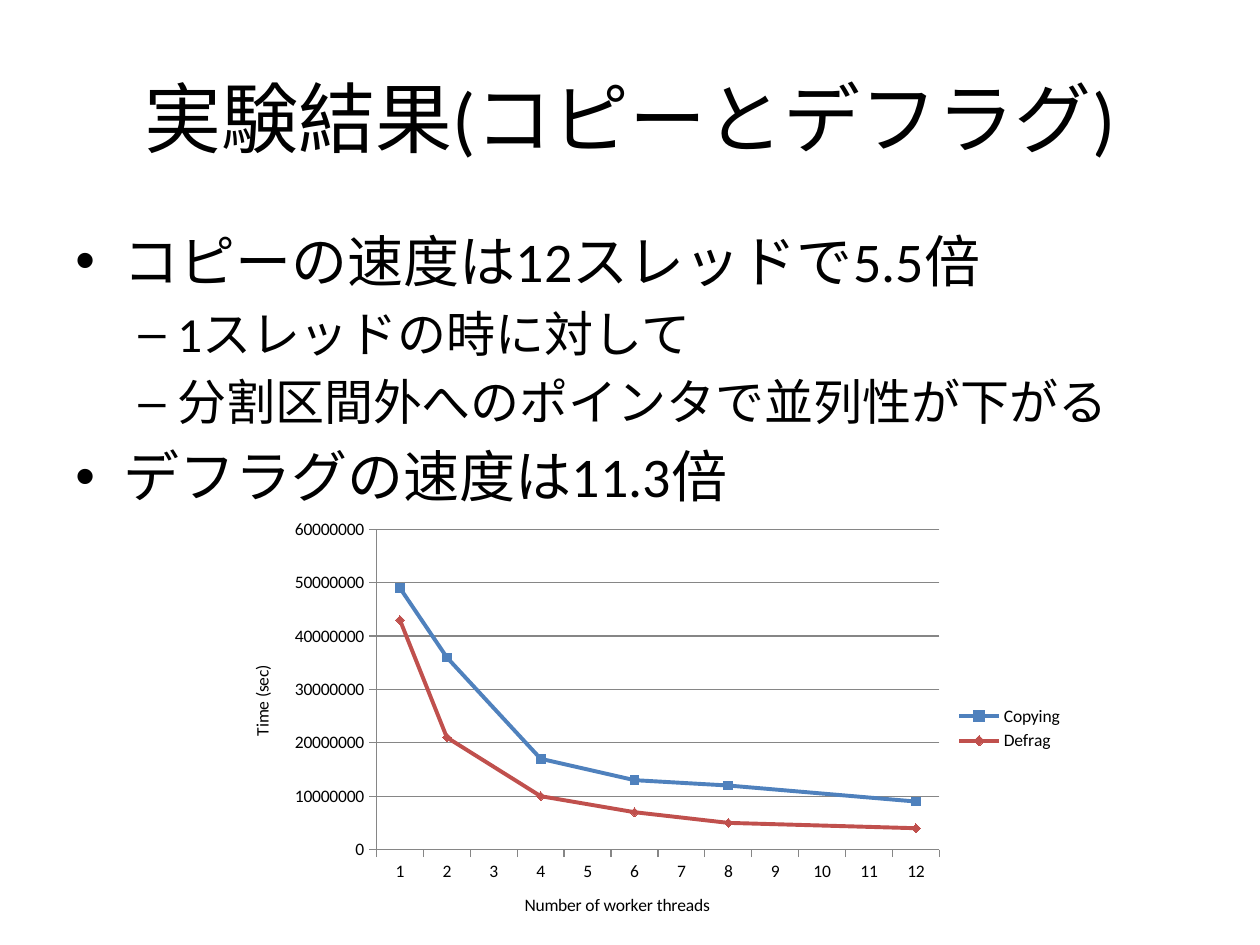
from dataclasses import dataclass

from lxml import etree
from pptx import Presentation
from pptx import util as u
from pptx.chart.data import CategoryChartData
from pptx.dml.color import RGBColor
from pptx.enum import chart as charts, text
from pptx.oxml import ns

PX = 914400 / 126


@dataclass(frozen=True)
class Theme:
    """Colours, font and type sizes of the slide."""
    font: str = "Calibri"
    ink: str = "000000"
    axis: str = "868686"
    copying: str = "4F81BD"
    defrag: str = "C0504D"
    title: int = 44
    levels: tuple = (32, 28)
    chart: int = 10


THEME = Theme()
BULLETS = [("•", 48, 48), ("–", 102, 39)]
POINTS = [
    (0, "コピーの速度は12スレッドで5.5倍"),
    (1, "1スレッドの時に対して"),
    (1, "分割区間外へのポインタで並列性が下がる"),
    (0, "デフラグの速度は11.3倍"),
]
SERIES = [
    ("Copying", {1: 49, 2: 36, 4: 17, 6: 13, 8: 12, 12: 9},
     THEME.copying, charts.XL_MARKER_STYLE.SQUARE),
    ("Defrag", {1: 43, 2: 21, 4: 10, 6: 7, 8: 5, 12: 4},
     THEME.defrag, charts.XL_MARKER_STYLE.DIAMOND),
]


def emu(*pixels):
    """Turn px lengths into EMU."""
    return [u.Emu(round(length * PX)) for length in pixels]


def style_font(font, size):
    """Give a font the theme's face and ink at one size."""
    font.name = THEME.font
    font.size = u.Pt(size)
    font.bold = False
    font.color.rgb = RGBColor.from_string(THEME.ink)


def add_frame(slide, box):
    """Add a wrapping text box and return its text frame."""
    frame = slide.shapes.add_textbox(*emu(*box)).text_frame
    frame.word_wrap = True
    return frame


def add_title(slide, box):
    """Place the centred slide title in its box."""
    frame = add_frame(slide, box)
    frame.vertical_anchor = text.MSO_ANCHOR.MIDDLE
    paragraph = frame.paragraphs[0]
    paragraph.text = "実験結果(コピーとデフラグ)"
    paragraph.alignment = text.PP_ALIGN.CENTER
    style_font(paragraph.font, THEME.title)


def set_bullet(paragraph, level):
    """Set the indent, spacing and bullet of one outline level."""
    mark, margin, hanging = BULLETS[level]
    paragraph.level = level
    properties = paragraph._p.get_or_add_pPr()
    left, indent = emu(margin, -hanging)
    properties.set("marL", str(left))
    properties.set("indent", str(indent))
    spacing = etree.SubElement(properties, ns.qn("a:spcBef"))
    etree.SubElement(spacing, ns.qn("a:spcPct")).set("val", "20000")
    etree.SubElement(properties, ns.qn("a:buFont")).set("typeface", "Arial")
    etree.SubElement(properties, ns.qn("a:buChar")).set("char", mark)


def add_points(slide, box):
    """Place the two-level bullet list in its box."""
    frame = add_frame(slide, box)
    for index, (level, wording) in enumerate(POINTS):
        paragraph = frame.add_paragraph() if index else frame.paragraphs[0]
        paragraph.text = wording
        set_bullet(paragraph, level)
        style_font(paragraph.font, THEME.levels[level])


def style_axis(axis, title):
    """Title an axis and colour its line."""
    axis.has_title = True
    paragraph = axis.axis_title.text_frame.paragraphs[0]
    paragraph.text = title
    style_font(paragraph.font, THEME.chart)
    axis.major_tick_mark = charts.XL_TICK_MARK.OUTSIDE
    axis.format.line.color.rgb = RGBColor.from_string(THEME.axis)
    axis.format.line.width = u.Pt(0.75)


def style_series(series, color, marker):
    """Colour one line and its markers."""
    rgb = RGBColor.from_string(color)
    series.smooth = False
    series.format.line.color.rgb = rgb
    series.format.line.width = u.Pt(2.25)
    series.marker.style = marker
    series.marker.size = 5
    series.marker.format.fill.solid()
    series.marker.format.fill.fore_color.rgb = rgb
    series.marker.format.line.color.rgb = rgb


def set_plot_area(chart, fractions):
    """Fix the inner plot area as fractions of the chart and span empty points."""
    plot_area = chart.element.find(".//" + ns.qn("c:plotArea"))
    layout = plot_area.find(ns.qn("c:layout"))
    if layout is None:
        layout = etree.Element(ns.qn("c:layout"))
        plot_area.insert(0, layout)
    manual = etree.SubElement(layout, ns.qn("c:manualLayout"))
    settings = [("layoutTarget", "inner"), ("xMode", "edge"), ("yMode", "edge")]
    for name, value in settings + list(zip("xywh", fractions)):
        etree.SubElement(manual, ns.qn("c:" + name)).set("val", str(value))
    chart.element.find(".//" + ns.qn("c:dispBlanksAs")).set("val", "span")


def add_timing_chart(slide, box):
    """Place the line chart of time against worker threads in its box."""
    threads = range(1, 13)
    data = CategoryChartData()
    data.categories = [str(count) for count in threads]
    for name, millions, _, _ in SERIES:
        data.add_series(name, [millions[count] * 10**6 if count in millions else None
                               for count in threads])
    chart = slide.shapes.add_chart(
        charts.XL_CHART_TYPE.LINE_MARKERS, *emu(*box), data).chart
    style_font(chart.font, THEME.chart)
    chart.has_title = False
    chart.has_legend = True
    chart.legend.position = charts.XL_LEGEND_POSITION.RIGHT
    chart.legend.include_in_layout = False
    chart.plots[0].vary_by_categories = False
    style_axis(chart.category_axis, "Number of worker threads")
    style_axis(chart.value_axis, "Time (sec)")
    chart.value_axis.minimum_scale = 0
    chart.value_axis.maximum_scale = 60000000
    chart.value_axis.major_unit = 10000000
    gridlines = chart.value_axis.major_gridlines.format.line
    gridlines.color.rgb = RGBColor.from_string(THEME.axis)
    gridlines.width = u.Pt(0.75)
    for series, (_, _, color, marker) in zip(chart.plots[0].series, SERIES):
        style_series(series, color, marker)
    set_plot_area(chart, (0.18, 0.04, 0.66, 0.74))


def main():
    """Build and save the slide."""
    presentation = Presentation()
    presentation.slide_width, presentation.slide_height = emu(1260, 945)
    slide = presentation.slides.add_slide(presentation.slide_layouts[6])
    add_title(slide, (63, 38, 1134, 158))
    add_points(slide, (63, 220, 1134, 321))
    add_timing_chart(slide, (223, 512, 853, 433))
    presentation.save("out.pptx")


if __name__ == "__main__":
    main()
